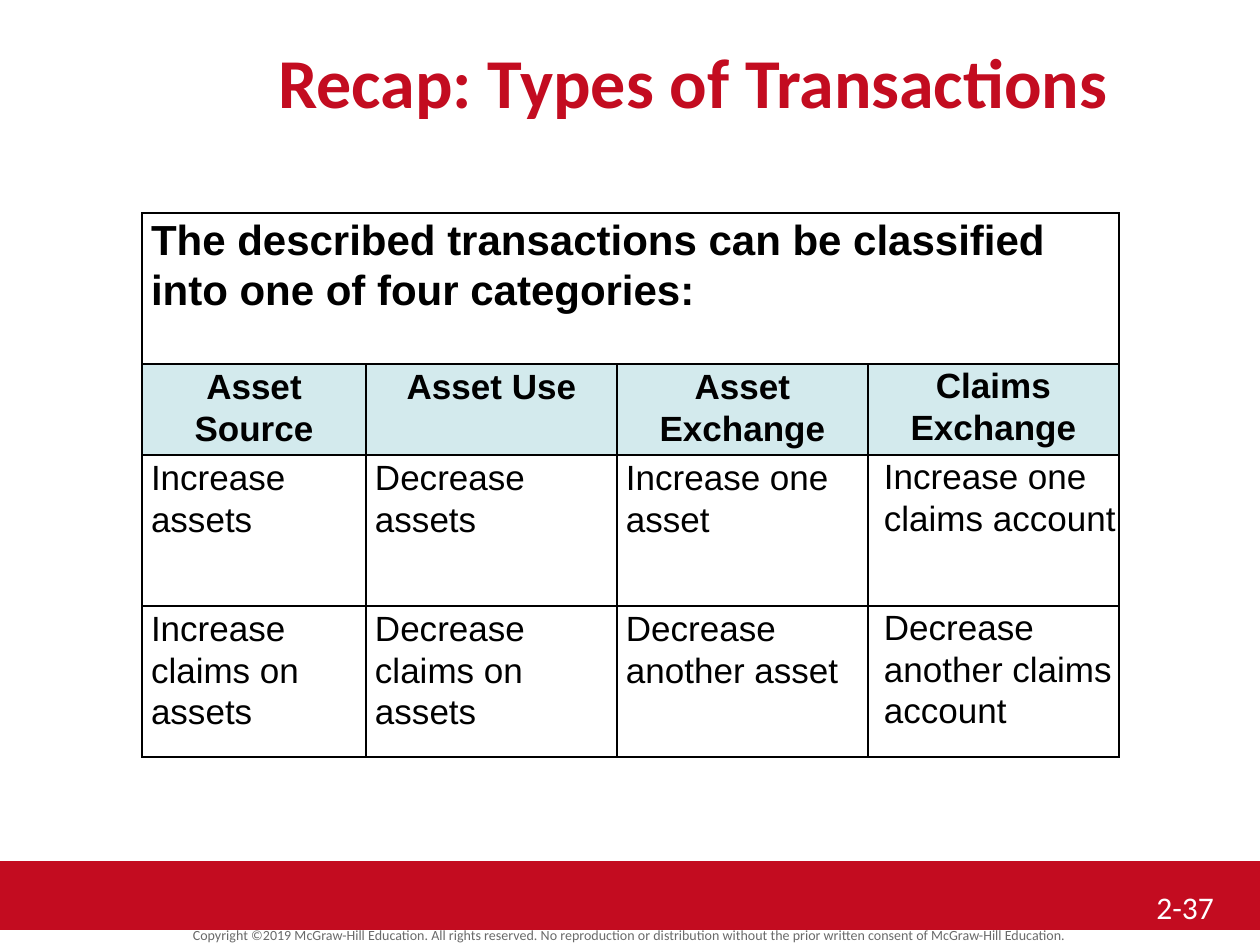
from lxml.etree import SubElement
from pptx import Presentation
from pptx.dml.color import RGBColor
from pptx.enum.shapes import MSO_SHAPE as Preset
from pptx.enum.text import MSO_ANCHOR as Anchor, PP_ALIGN as Align
from pptx.oxml.ns import qn
from pptx.util import Pt

PX = 914400 / 126
RED = RGBColor(0xC3, 0x0C, 0x20)
PALE_TEAL = RGBColor(0xD3, 0xEA, 0xED)
GREY = RGBColor(0x6A, 0x6A, 0x6A)
WHITE = RGBColor(0xFF, 0xFF, 0xFF)
BLACK = RGBColor(0, 0, 0)

HEADING = "The described transactions can be classified into one of four categories:"
CATEGORIES = [
    ["Asset Source", "Asset Use", "Asset Exchange", "Claims Exchange"],
    ["Increase assets", "Decrease assets", "Increase one asset",
     "Increase one claims account"],
    ["Increase claims on assets", "Decrease claims on assets",
     "Decrease another asset", "Decrease another claims account"],
]
COLUMN_WIDTHS = [224, 251, 251, 251]
ROW_HEIGHTS = [151, 73, 151, 151]


def px(value):
    return round(value * PX)


def write(paragraph, words, size, color, font="Calibri", bold=False):
    run = paragraph.add_run()
    run.text = words
    run.font.size = Pt(size)
    run.font.name = font
    run.font.bold = bold
    run.font.color.rgb = color


def add_label(slide, box, words, size, color, align=Align.LEFT,
              anchor=Anchor.TOP, bold=False):
    frame = slide.shapes.add_textbox(*map(px, box)).text_frame
    frame.word_wrap = True
    frame.vertical_anchor = anchor
    paragraph = frame.paragraphs[0]
    paragraph.alignment = align
    write(paragraph, words, size, color, bold=bold)
    return paragraph


def add_footer(slide, left, top, width):
    # Red band
    band = slide.shapes.add_shape(Preset.RECTANGLE, px(left), px(top), px(width), px(69))
    band.shadow.inherit = False
    band.fill.solid()
    band.fill.fore_color.rgb = RED
    band.line.fill.background()
    # Copyright line and page number
    notice = add_label(
        slide, (left, top + 64, width, 24),
        "Copyright ©2019 McGraw-Hill Education. All rights reserved. No reproduction "
        "or distribution without the prior written consent of McGraw-Hill Education.",
        8, GREY, Align.CENTER, Anchor.MIDDLE)
    notice.line_spacing = 0.8
    add_label(slide, (left + width - 116, top + 21, 116, 53), "2-37", 18, WHITE)


def add_borders(cell):
    properties = cell._tc.get_or_add_tcPr()
    for position, side in enumerate(("lnL", "lnR", "lnT", "lnB")):
        line = properties.makeelement(qn(f"a:{side}"), {"w": str(Pt(1))})
        fill = SubElement(line, qn("a:solidFill"))
        SubElement(fill, qn("a:srgbClr"), val=str(BLACK))
        properties.insert(position, line)


def fill_cell(cell, words, size, bold, align=Align.LEFT, flush=False):
    cell.margin_left = cell.margin_right = px(0 if flush else 9)
    cell.margin_top = px(0 if flush else 1)
    cell.margin_bottom = 0
    paragraph = cell.text_frame.paragraphs[0]
    paragraph.alignment = align
    paragraph.line_spacing = 1.07
    paragraph.space_after = Pt(8)
    if flush and align == Align.LEFT:
        properties = paragraph._p.get_or_add_pPr()
        properties.set("marL", str(px(16)))
        properties.set("indent", "0")
    write(paragraph, words, size, BLACK, "Arial", bold)


def add_transaction_table(slide, left, top):
    table = slide.shapes.add_table(
        len(ROW_HEIGHTS), len(COLUMN_WIDTHS), px(left), px(top),
        px(sum(COLUMN_WIDTHS)), px(sum(ROW_HEIGHTS))).table
    table.first_row = table.horz_banding = False
    for column, width in zip(table.columns, COLUMN_WIDTHS):
        column.width = px(width)
    for row, height in zip(table.rows, ROW_HEIGHTS):
        row.height = px(height)
    for cell in table.iter_cells():
        cell.fill.background()
        add_borders(cell)

    # Heading across all columns
    table.cell(0, 0).merge(table.cell(0, len(COLUMN_WIDTHS) - 1))
    fill_cell(table.cell(0, 0), HEADING, 24, True)

    # Category names, then their effects
    for row, entries in enumerate(CATEGORIES, start=1):
        is_header = row == 1
        for column, words in enumerate(entries):
            cell = table.cell(row, column)
            if is_header:
                cell.fill.solid()
                cell.fill.fore_color.rgb = PALE_TEAL
            fill_cell(cell, words, 20, is_header,
                      Align.CENTER if is_header else Align.LEFT,
                      flush=column == len(entries) - 1)


def main():
    deck = Presentation()
    deck.slide_width, deck.slide_height = px(1260), px(945)
    slide = deck.slides.add_slide(deck.slide_layouts[6])
    add_footer(slide, 0, 861, 1260)
    add_label(slide, (126, 32, 1134, 84), "Recap: Types of Transactions", 40, RED,
              Align.CENTER, bold=True)
    add_transaction_table(slide, 142, 213)
    deck.save("out.pptx")


if __name__ == "__main__":
    main()
